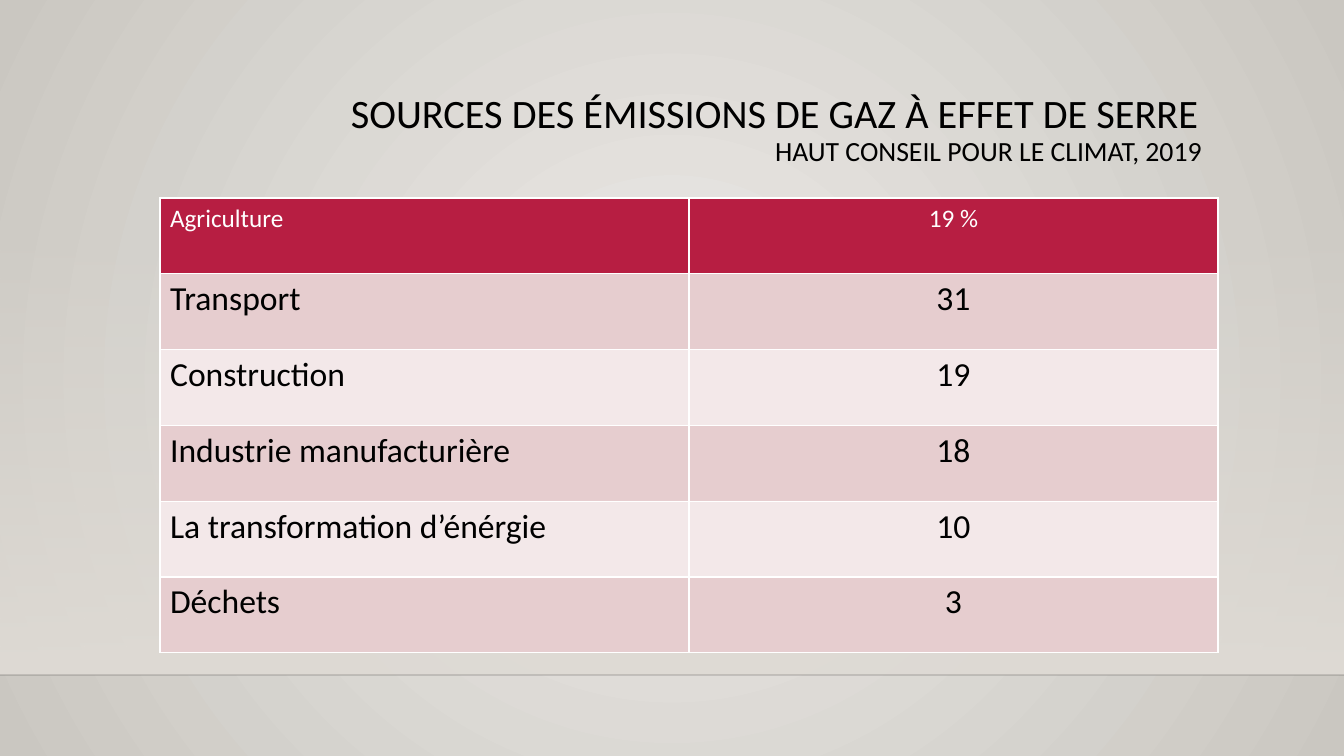
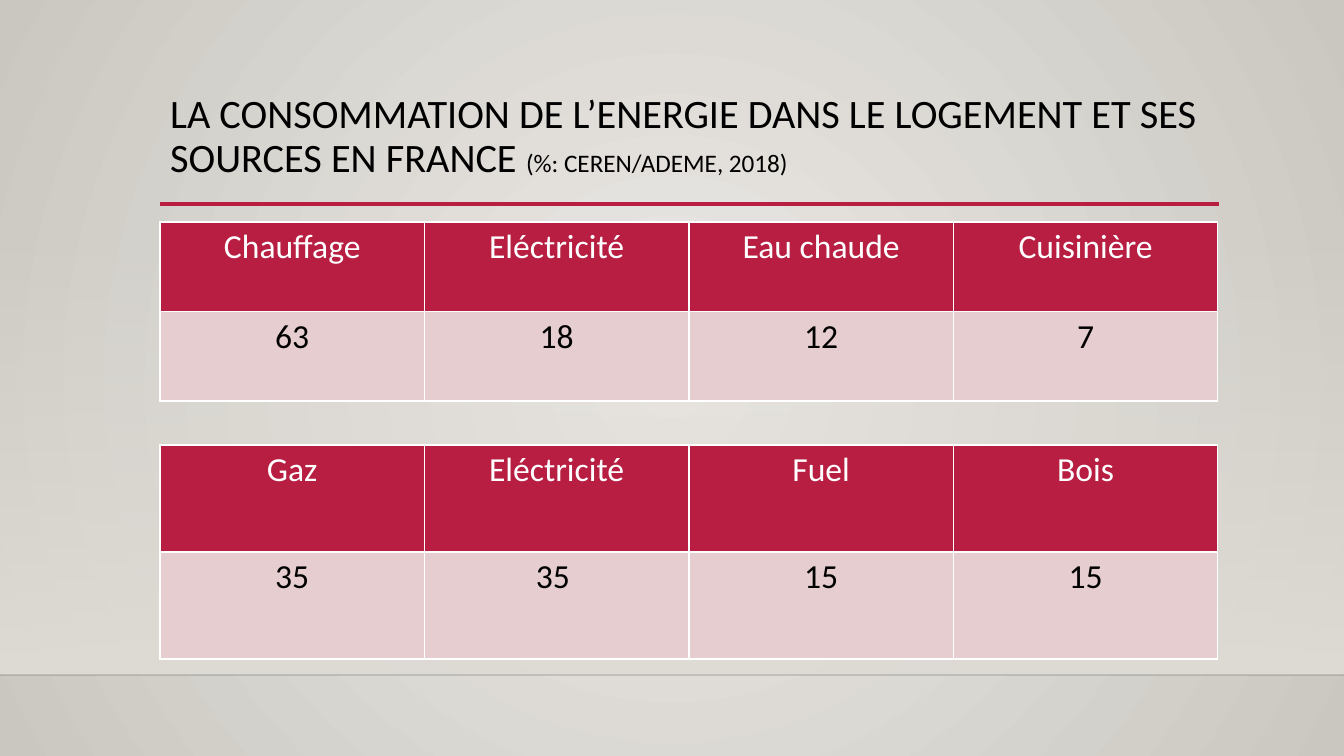
from collections import namedtuple
from dataclasses import dataclass

from lxml import etree
from pptx import Presentation
from pptx import util as u
from pptx.dml import color
from pptx.enum import shapes, text
from pptx.oxml import ns

Box = namedtuple("Box", "left top width height")
SCALE = 12192000 / 1344
PAGE = Box(0, 0, 1344, 756)
FLOOR = Box(0, 223, 1344, 452)
RULE = Box(160, 204, 1059, 0)


@dataclass(frozen=True)
class Theme:
    font: str = "Calibri"
    title: float = 28.8
    subtitle: float = 19.8
    body: int = 24
    small: int = 18
    ink: str = "000000"
    white: str = "FFFFFF"
    accent: str = "B71E42"
    bands: tuple = ("E6CDCF", "F3E8E9")
    glow: tuple = ("ECEAE7", "CAC7C1")
    wall: str = "DFDBD5"
    edge: str = "000001"


THEME = Theme()


def px(length):
    return u.Emu(round(length * SCALE))


def place(box):
    return [px(length) for length in box]


def rgb(value):
    return color.RGBColor.from_string(value)


def add_child(parent, tag, **attributes):
    return etree.SubElement(parent, ns.qn(tag), attributes)


def set_alpha(element, percent):
    for value in element.iter(ns.qn("a:srgbClr")):
        add_child(value, "a:alpha", val=str(percent * 1000))


def fill_gradient(fill, colors):
    fill.gradient()
    for stop, position, value in zip(fill.gradient_stops, (0, 1), colors):
        stop.color.rgb = rgb(value)
        stop.position = position


def set_background(layout):
    fill_gradient(layout.background.fill, THEME.glow)
    linear = layout.element.xpath("./p:cSld/p:bg//a:lin")[0]
    gradient = linear.getparent()
    circle = add_child(gradient, "a:path", path="circle")
    add_child(circle, "a:fillToRect", l="50000", t="50000", r="50000", b="50000")
    gradient.replace(linear, circle)


def add_rule(slide, box, value, width):
    line = slide.shapes.add_connector(
        shapes.MSO_CONNECTOR.STRAIGHT,
        px(box.left), px(box.top), px(box.left + box.width), px(box.top + box.height))
    line.line.color.rgb = rgb(value)
    line.line.width = u.Pt(width)
    add_child(line.element.spPr, "a:effectLst")
    return line


def add_floor(slide, box):
    floor = slide.shapes.add_shape(shapes.MSO_SHAPE.RECTANGLE, *place(box))
    floor.shadow.inherit = False
    floor.line.fill.background()
    fill_gradient(floor.fill, (THEME.wall, THEME.wall))
    floor.fill.gradient_angle = 270
    set_alpha(floor.element.spPr.find(".//" + ns.qn("a:gs")), 0)
    edge = add_rule(slide, Box(box.left, box.top + box.height, box.width, 0), THEME.edge, 1)
    set_alpha(edge.element.spPr, 20)
    return [floor, edge]


def decorate_layout(layout, slide):
    set_background(layout)
    parts = add_floor(slide, FLOOR) + [add_rule(slide, RULE, THEME.accent, 2.5)]
    for number, part in enumerate(parts, 101):
        part.element.xpath(".//p:cNvPr")[0].set("id", str(number))
        layout.shapes.element.append(part.element)


def add_run(paragraph, words, size, value):
    run = paragraph.add_run()
    run.text = words
    run.font.name = THEME.font
    run.font.size = u.Pt(size)
    run.font.bold = False
    run.font.color.rgb = rgb(value)


def fill_title(slide, box, lines, alignment):
    title = slide.shapes.title
    title.left, title.top, title.width, title.height = place(box)
    frame = title.text_frame
    frame.word_wrap = True
    frame.auto_size = text.MSO_AUTO_SIZE.NONE
    frame.vertical_anchor = text.MSO_ANCHOR.TOP
    paragraph = frame.paragraphs[0]
    paragraph.alignment = alignment
    paragraph.line_spacing = 0.9
    for index, line in enumerate(lines):
        if index:
            paragraph.add_line_break()
        for words, size in line:
            add_run(paragraph, words, size, THEME.ink)


def set_borders(cell):
    properties = cell._tc.get_or_add_tcPr()
    for side in "LRTB":
        line = add_child(properties, f"a:ln{side}", w=str(u.Pt(1)))
        add_child(add_child(line, "a:solidFill"), "a:srgbClr", val=THEME.white)


def add_data_table(slide, box, rows, header_size=THEME.body,
                   first_alignment=text.PP_ALIGN.CENTER):
    table = slide.shapes.add_table(len(rows), len(rows[0]), *place(box)).table
    for row_index, row in enumerate(rows):
        header = row_index == 0
        fill = THEME.accent if header else THEME.bands[(row_index - 1) % 2]
        for column_index, words in enumerate(row):
            cell = table.cell(row_index, column_index)
            set_borders(cell)
            cell.fill.solid()
            cell.fill.fore_color.rgb = rgb(fill)
            paragraph = cell.text_frame.paragraphs[0]
            paragraph.alignment = text.PP_ALIGN.CENTER if column_index else first_alignment
            add_run(paragraph, words, header_size if header else THEME.body,
                    THEME.white if header else THEME.ink)


def build_emissions(slide):
    fill_title(slide, Box(160, 89, 1058, 96), [
        [("SOURCES DES ÉMISSIONS DE GAZ À EFFET DE SERRE ", THEME.title)],
        [("HAUT CONSEIL POUR LE CLIMAT, 2019 ", THEME.subtitle)],
    ], text.PP_ALIGN.RIGHT)
    add_data_table(slide, Box(160, 198, 1058, 455), [
        ("Agriculture", "19 %"),
        ("Transport", "31"),
        ("Construction", "19"),
        ("Industrie manufacturière", "18"),
        ("La transformation d’énérgie", "10"),
        ("Déchets", "3"),
    ], THEME.small, text.PP_ALIGN.LEFT)


def build_housing(slide):
    fill_title(slide, Box(160, 89, 1058, 116), [[
        ("LA CONSOMMATION DE L’ENERGIE DANS LE LOGEMENT ET SES SOURCES EN FRANCE ", THEME.title),
        ("(%: CEREN/ADEME, 2018)", THEME.small),
    ]], text.PP_ALIGN.LEFT)
    add_data_table(slide, Box(160, 222, 1058, 179), [
        ("Chauffage", "Eléctricité", "Eau chaude", "Cuisinière"),
        ("63", "18", "12", "7"),
    ])
    add_data_table(slide, Box(160, 445, 1058, 214), [
        ("Gaz", "Eléctricité", "Fuel", "Bois"),
        ("35", "35 ", "15", "15"),
    ])


def main():
    presentation = Presentation()
    presentation.slide_width = px(PAGE.width)
    presentation.slide_height = px(PAGE.height)
    layout = presentation.slide_layouts.get_by_name("Title Only")
    builders = (build_emissions, build_housing)
    slides = [presentation.slides.add_slide(layout) for _ in builders]
    decorate_layout(layout, slides[0])
    for build, slide in zip(builders, slides):
        build(slide)
    presentation.save("out.pptx")


if __name__ == "__main__":
    main()
